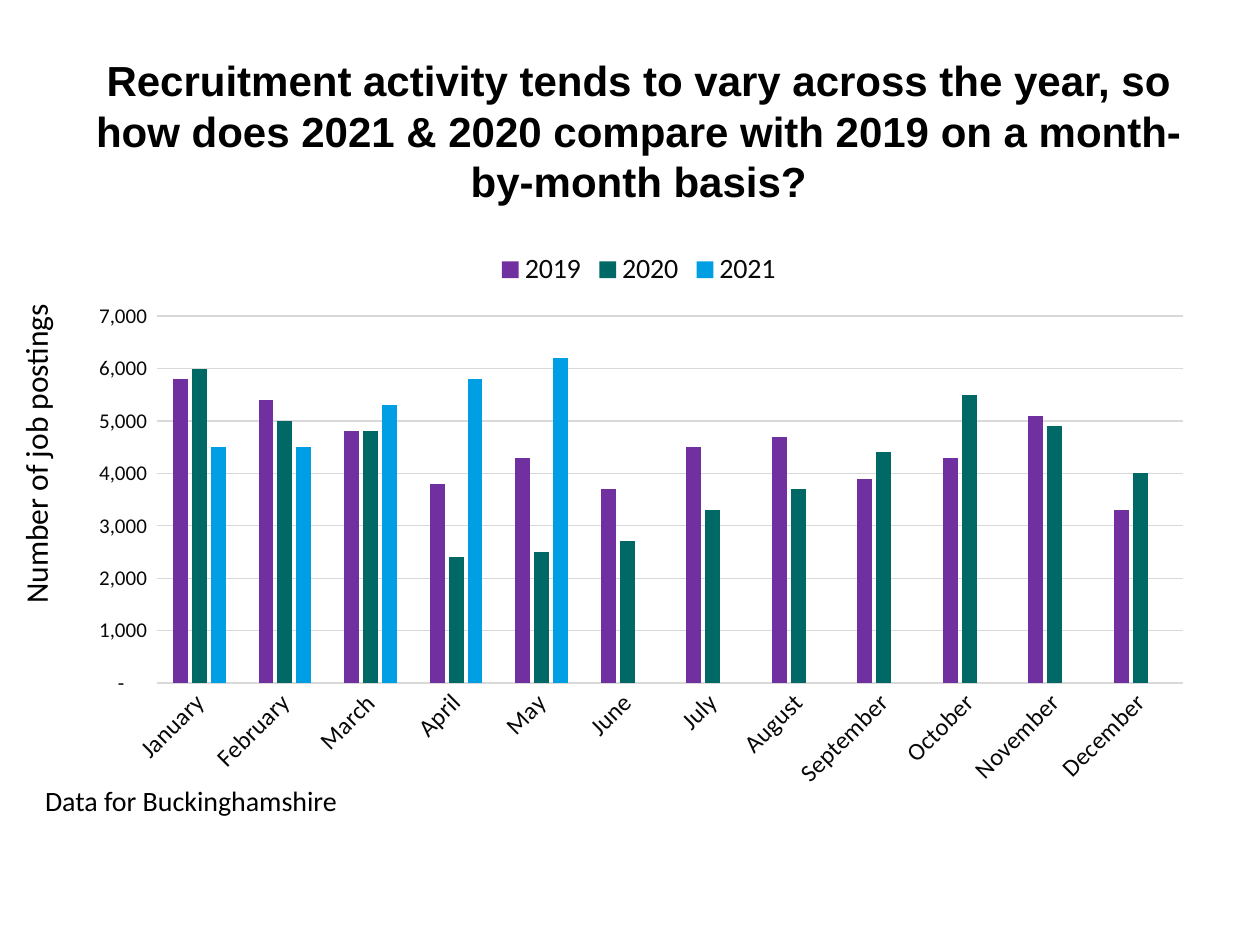
import dataclasses

import pptx
import pptx.chart.data
import pptx.dml.color
import pptx.enum.chart
import pptx.enum.text
import pptx.util

Pt = pptx.util.Pt
Color = pptx.dml.color.RGBColor.from_string


@dataclasses.dataclass(frozen=True)
class Theme:
    """Fonts, colours and type sizes of the slide."""
    title_font: str = "Arial"
    body_font: str = "Calibri"
    ink: str = "000000"
    chart_ink: str = "080808"
    rule: str = "D9D9D9"
    series: tuple = ("7030A0", "006965", "009FE3")
    title: int = 24
    axis_title: int = 18
    note: int = 16
    legend: int = 16
    months: int = 14
    values: int = 12
    chart: int = 10


THEME = Theme()
MONTHS = ("January", "February", "March", "April", "May", "June", "July",
          "August", "September", "October", "November", "December")
POSTINGS = {
    "2019": (5800, 5400, 4800, 3800, 4300, 3700, 4500, 4700, 3900, 4300, 5100, 3300),
    "2020": (6000, 5000, 4800, 2400, 2500, 2700, 3300, 3700, 4400, 5500, 4900, 4000),
    "2021": (4500, 4500, 5300, 5800, 6200) + (None,) * 7,
}
NUMBER_FORMAT = '_-* #,##0_-;\\-* #,##0_-;_-* "-"??_-;_-@_-'


def style_font(font, name, size, color, bold=False):
    """Set the typeface, size, colour and weight of a font."""
    font.name = name
    font.size = Pt(size)
    font.bold = bold
    font.color.rgb = Color(color)


def style_line(line, color):
    """Draw a thin rule in the given colour."""
    line.color.rgb = Color(color)
    line.width = Pt(0.75)


def place_title(page, box, text):
    """Move, fill and format the title placeholder."""
    title = page.shapes.title
    title.left, title.top, title.width, title.height = map(Pt, box)
    frame = title.text_frame
    frame.text = text
    frame.word_wrap = True
    frame.auto_size = pptx.enum.text.MSO_AUTO_SIZE.NONE
    frame.vertical_anchor = pptx.enum.text.MSO_ANCHOR.MIDDLE
    para = frame.paragraphs[0]
    para.alignment = pptx.enum.text.PP_ALIGN.CENTER
    style_font(para.runs[0].font, THEME.title_font, THEME.title, THEME.ink, True)


def place_label(page, box, text, size, upward=False):
    """Add a one-line label, optionally reading upward."""
    frame = page.shapes.add_textbox(*map(Pt, box)).text_frame
    frame.text = text
    frame.word_wrap = True
    frame.auto_size = pptx.enum.text.MSO_AUTO_SIZE.SHAPE_TO_FIT_TEXT
    if upward:
        frame._txBody.bodyPr.set("vert", "vert270")
    style_font(frame.paragraphs[0].runs[0].font, THEME.body_font, size, THEME.ink)


def style_axes(chart):
    """Format the month axis, the value axis and its gridlines."""
    for axis, size in ((chart.category_axis, THEME.months),
                       (chart.value_axis, THEME.values)):
        axis.major_tick_mark = pptx.enum.chart.XL_TICK_MARK.NONE
        axis.minor_tick_mark = pptx.enum.chart.XL_TICK_MARK.NONE
        style_font(axis.tick_labels.font, THEME.body_font, size, THEME.chart_ink)
    months, values = chart.category_axis, chart.value_axis
    style_line(months.format.line, THEME.rule)
    months._element.txPr.bodyPr.set("rot", "-2700000")
    values.format.line.fill.background()
    values.has_major_gridlines = True
    style_line(values.major_gridlines.format.line, THEME.rule)
    values.minimum_scale, values.maximum_scale, values.major_unit = 0, 7000, 1000
    values.tick_labels.number_format = NUMBER_FORMAT
    values.tick_labels.number_format_is_linked = False


def place_chart(page, box):
    """Add the clustered columns of postings by month and year."""
    data = pptx.chart.data.CategoryChartData(number_format="#,##0")
    data.categories = MONTHS
    for year, counts in POSTINGS.items():
        data.add_series(year, counts)
    kind = pptx.enum.chart.XL_CHART_TYPE.COLUMN_CLUSTERED
    chart = page.shapes.add_chart(kind, *map(Pt, box), data).chart
    style_font(chart.font, THEME.body_font, THEME.chart, THEME.ink)
    chart.has_title = False
    chart.has_legend = True
    chart.legend.position = pptx.enum.chart.XL_LEGEND_POSITION.TOP
    chart.legend.include_in_layout = False
    style_font(chart.legend.font, THEME.body_font, THEME.legend, THEME.chart_ink)
    style_axes(chart)
    plot = chart.plots[0]
    plot.gap_width, plot.overlap = 219, -27
    plot.vary_by_categories = False
    for series, color in zip(plot.series, THEME.series):
        series.invert_if_negative = False
        series.format.fill.solid()
        series.format.fill.fore_color.rgb = Color(color)


def main():
    """Build the slide and save the deck."""
    deck = pptx.Presentation()
    deck.slide_width, deck.slide_height = Pt(720), Pt(540)
    page = deck.slides.add_slide(deck.slide_layouts.get_by_name("Title Only"))
    place_title(page, (41, 29.5, 648, 90),
                "Recruitment activity tends to vary across the year, so how does "
                "2021 & 2020 compare with 2019 on a month-by-month basis?")
    place_chart(page, (41, 136, 648, 321))
    place_label(page, (18.7, 444.2, 272, 26.6), "Data for Buckinghamshire", THEME.note)
    place_label(page, (5.8, 149.8, 36, 202.3), "Number of job postings",
                THEME.axis_title, upward=True)
    deck.save("out.pptx")


if __name__ == "__main__":
    main()
